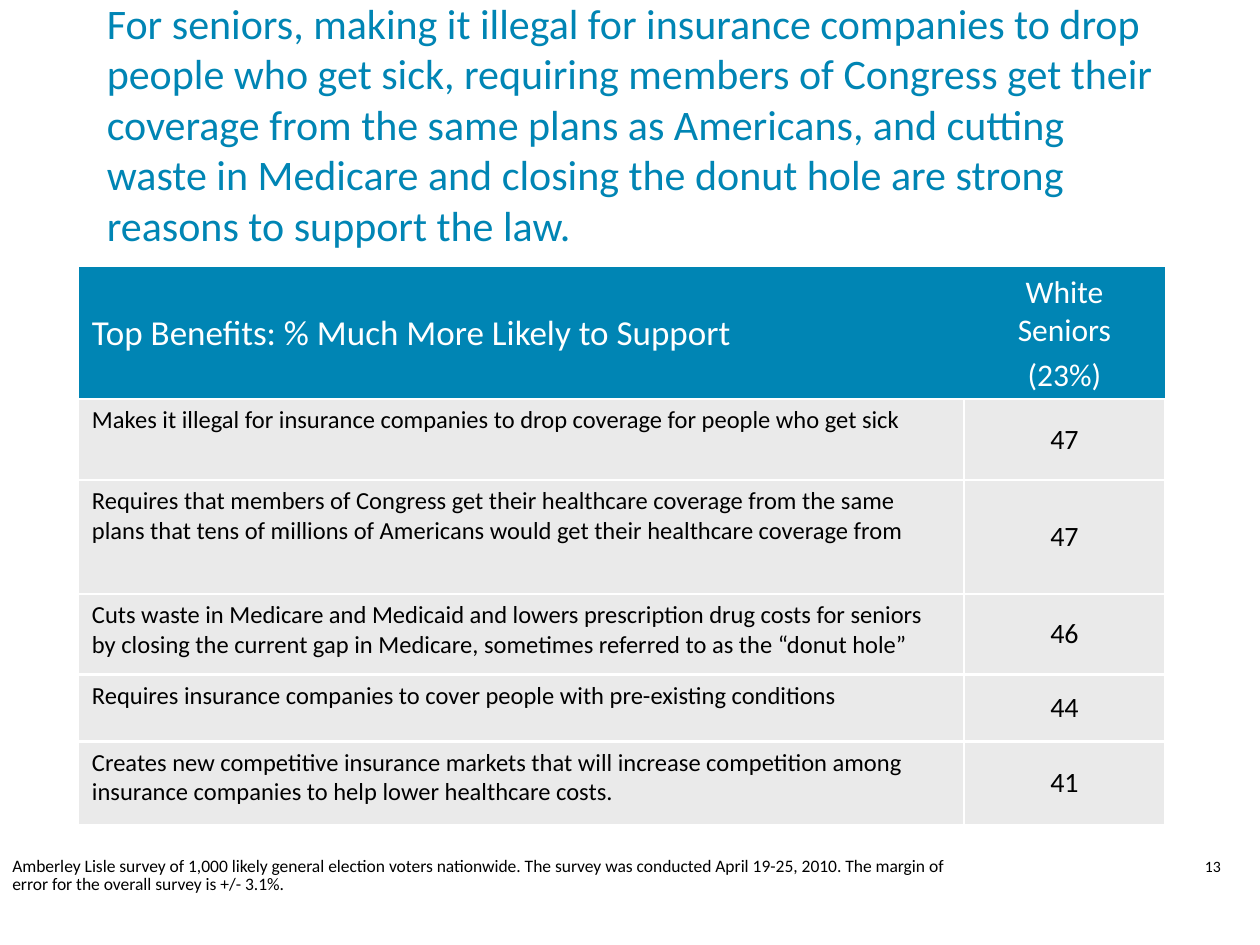
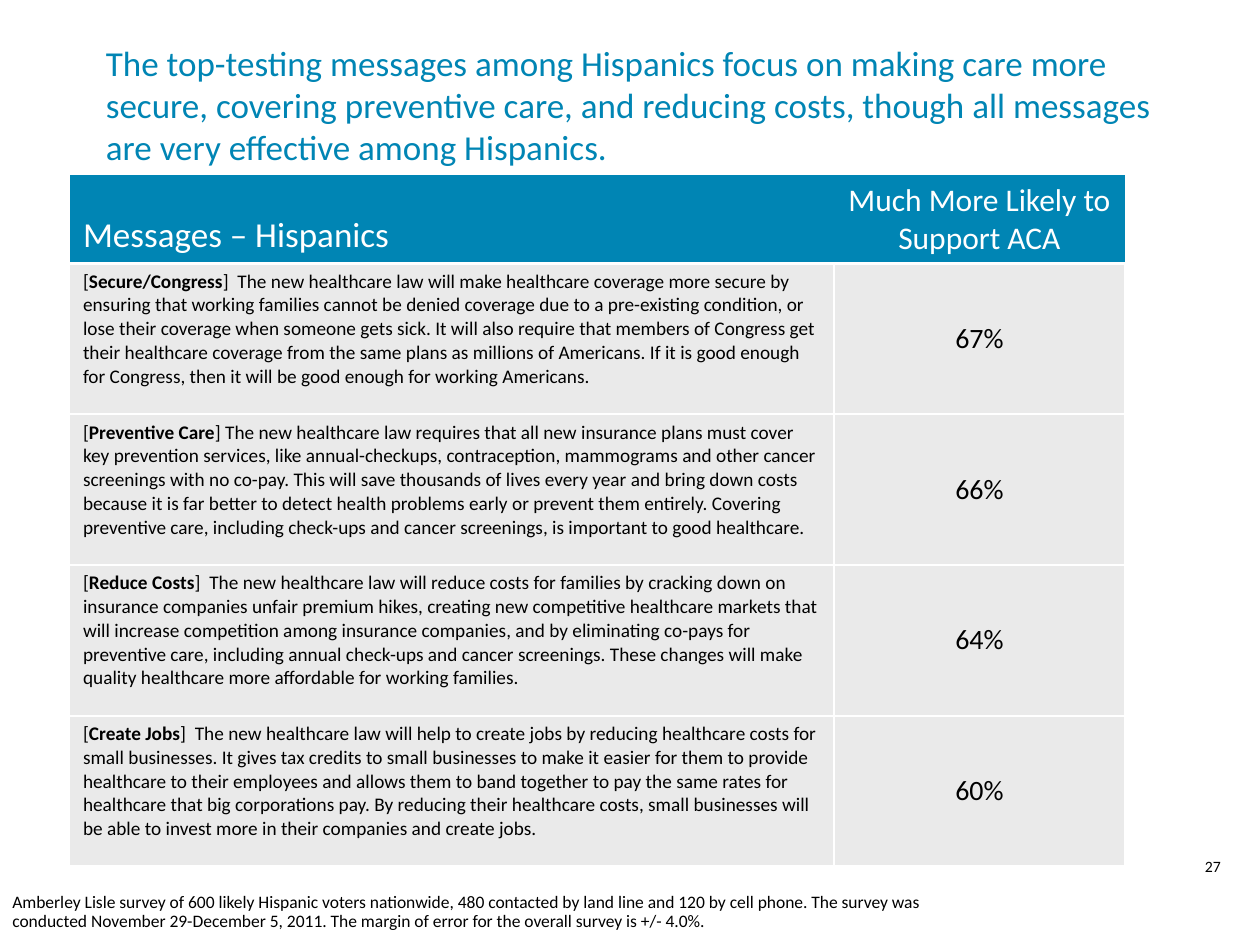
from dataclasses import dataclass

import lxml.etree
import pptx
import pptx.dml.color
import pptx.enum.text
import pptx.oxml.ns
import pptx.presentation
import pptx.slide
import pptx.table
import pptx.text.text
import pptx.util

Cm = pptx.util.Cm
Pt = pptx.util.Pt
Align = pptx.enum.text.PP_ALIGN
Anchor = pptx.enum.text.MSO_ANCHOR
qn = pptx.oxml.ns.qn

# Shared look
COLORS = {"accent": "0085B4", "row": "EAEAEA", "white": "FFFFFF", "black": "000000"}
FONT = "Calibri"
SPACE_BEFORE = 0.2  # share of the text size
BORDER = Pt(1.5)
HEADING_SIZE, COLUMN_SIZE, VALUE_SIZE = 20, 18, 16
FOOTNOTE_SIZE, NUMBER_SIZE = 10, 9
TITLE_WIDTH = 21.64
FOOTNOTE_WIDTH, FOOTNOTE_HEIGHT = 19.63, 1.02
NUMBER_PLACE = (23.5, 17.15, 1.9, 0.84)


@dataclass
class Row:
    text: str
    value: str
    label: str = ""  # bold, shown in square brackets before the text


@dataclass
class Grid:
    left: float
    top: float
    columns: list[float]
    heights: list[float]
    heading: str
    heading_anchor: Anchor
    value_heading: list[str]
    text_size: int
    rows: list[Row]


@dataclass
class SurveyPage:
    number: str
    title: str
    title_size: int
    title_place: tuple[float, float, float]  # left, top, height
    grid: Grid
    footnote: str
    footnote_top: float


# Content, lengths in centimetres
PAGES = [
    SurveyPage(
        number="13",
        title="For seniors, making it illegal for insurance companies to drop people who get sick, "
        "requiring members of Congress get their coverage from the same plans as Americans, and "
        "cutting waste in Medicare and closing the donut hole are strong reasons to support the law.",
        title_size=24,
        title_place=(1.9, 1.04, 2.9),
        grid=Grid(
            left=1.6,
            top=5.38,
            columns=[17.83, 4.06],
            heights=[2.18, 1.63, 2.29, 1.63, 1.35, 1.68],
            heading="Top Benefits: % Much More Likely to Support",
            heading_anchor=Anchor.MIDDLE,
            value_heading=["White Seniors", "(23%)"],
            text_size=14,
            rows=[
                Row("Makes it illegal for insurance companies to drop coverage for people "
                    "who get sick", "47"),
                Row("Requires that members of Congress get their healthcare coverage from the same "
                    "plans that tens of millions of Americans would get their healthcare coverage "
                    "from", "47"),
                Row("Cuts waste in Medicare and Medicaid and lowers prescription drug costs for "
                    "seniors by closing the current gap in Medicare, sometimes referred to as the "
                    "“donut hole”", "46"),
                Row("Requires insurance companies to cover people with pre-existing conditions",
                    "44"),
                Row("Creates new competitive insurance markets that will increase competition "
                    "among insurance companies to help lower healthcare costs.", "41"),
            ],
        ),
        footnote="Amberley Lisle survey of 1,000 likely general election voters nationwide. The "
        "survey was conducted April 19-25, 2010. The margin of error for the overall survey is "
        "+/- 3.1%.",
        footnote_top=17.15,
    ),
    SurveyPage(
        number="27",
        title="The top-testing messages among Hispanics focus on making care more secure, covering "
        "preventive care, and reducing costs, though all messages are very effective among "
        "Hispanics.",
        title_size=20,
        title_place=(1.88, 0.64, 2.95),
        grid=Grid(
            left=1.42,
            top=3.53,
            columns=[15.39, 5.87],
            heights=[1.78] + [3.04] * 4,
            heading="Messages – Hispanics",
            heading_anchor=Anchor.BOTTOM,
            value_heading=["Much More Likely to Support ACA"],
            text_size=11,
            rows=[
                Row("  The new healthcare law will make healthcare coverage more secure by ensuring "
                    "that working families cannot be denied coverage due to a pre-existing "
                    "condition, or lose their coverage when someone gets sick. It will also require "
                    "that members of Congress get their healthcare coverage from the same plans as "
                    "millions of Americans. If it is good enough for Congress, then it will be good "
                    "enough for working Americans.", "67%", "Secure/Congress"),
                Row(" The new healthcare law requires that all new insurance plans must cover key "
                    "prevention services, like annual-checkups, contraception, mammograms and other "
                    "cancer screenings with no co-pay. This will save thousands of lives every year "
                    "and bring down costs because it is far better to detect health problems early "
                    "or prevent them entirely. Covering preventive care, including check-ups and "
                    "cancer screenings, is important to good healthcare.", "66%", "Preventive Care"),
                Row("  The new healthcare law will reduce costs for families by cracking down on "
                    "insurance companies unfair premium hikes, creating new competitive healthcare "
                    "markets that will increase competition among insurance companies, and by "
                    "eliminating co-pays for preventive care, including annual check-ups and cancer "
                    "screenings. These changes will make quality healthcare more affordable for "
                    "working families.", "64%", "Reduce Costs"),
                Row("  The new healthcare law will help to create jobs by reducing healthcare costs "
                    "for small businesses. It gives tax credits to small businesses to make it "
                    "easier for them to provide healthcare to their employees and allows them to "
                    "band together to pay the same rates for healthcare that big corporations pay. "
                    "By reducing their healthcare costs, small businesses will be able to invest "
                    "more in their companies and create jobs.", "60%", "Create Jobs"),
            ],
        ),
        footnote="Amberley Lisle survey of 600 likely Hispanic voters nationwide, 480 contacted by "
        "land line and 120 by cell phone. The survey was conducted November 29-December 5, 2011. "
        "The margin of error for the overall survey is +/- 4.0%.",
        footnote_top=17.88,
    ),
]


def rgb(name: str) -> pptx.dml.color.RGBColor:
    return pptx.dml.color.RGBColor.from_string(COLORS[name])


def style(para: pptx.text.text._Paragraph, size: int, color: str, align: Align = Align.LEFT) -> None:
    para.alignment = align
    para.font.name = FONT
    para.font.size = Pt(size)
    para.font.color.rgb = rgb(color)


def add_text(page: pptx.slide.Slide, place: tuple[float, ...], text: str, size: int,
             align: Align = Align.LEFT, line_spacing: float = 1.0) -> None:
    box = page.shapes.add_textbox(*map(Cm, place))
    box.text_frame.word_wrap = True
    para = box.text_frame.paragraphs[0]
    para.text = text
    para.line_spacing = line_spacing
    style(para, size, "black", align)


def set_borders(cell: pptx.table._Cell, sides: str) -> None:
    """Draw white lines on the given sides (of L, R, T, B) and none on the others."""
    properties = cell._tc.get_or_add_tcPr()
    for index, side in enumerate("LRTB"):
        line = lxml.etree.Element(qn(f"a:ln{side}"), w=str(int(BORDER)))
        if side in sides:
            fill = lxml.etree.SubElement(line, qn("a:solidFill"))
            lxml.etree.SubElement(fill, qn("a:srgbClr"), val=COLORS["white"])
        else:
            lxml.etree.SubElement(line, qn("a:noFill"))
        properties.insert(index, line)


def fill_cell(cell: pptx.table._Cell, paragraphs: list[list[str]], size: int, color: str, fill: str,
              align: Align, anchor: Anchor, sides: str) -> None:
    """Write paragraphs of text pieces; every second piece is bold."""
    cell.fill.solid()
    cell.fill.fore_color.rgb = rgb(fill)
    cell.vertical_anchor = anchor
    set_borders(cell, sides)
    for number, pieces in enumerate(paragraphs):
        para = cell.text_frame.add_paragraph() if number else cell.text_frame.paragraphs[0]
        if number:
            para.space_before = Pt(size * SPACE_BEFORE)
        for index, piece in enumerate(pieces):
            span = para.add_run()
            span.text = piece
            span.font.bold = index % 2 == 1
        style(para, size, color, align)


def add_grid(page: pptx.slide.Slide, grid: Grid) -> None:
    frame = page.shapes.add_table(len(grid.heights), len(grid.columns), Cm(grid.left), Cm(grid.top),
                                  Cm(sum(grid.columns)), Cm(sum(grid.heights)))
    table = frame.table
    table.first_row = table.horz_banding = False
    for column, width in zip(table.columns, grid.columns):
        column.width = Cm(width)
    for row, height in zip(table.rows, grid.heights):
        row.height = Cm(height)

    # Heading row
    fill_cell(table.cell(0, 0), [[grid.heading]], HEADING_SIZE, "white", "accent",
              Align.LEFT, grid.heading_anchor, "B")
    fill_cell(table.cell(0, 1), [[line] for line in grid.value_heading], COLUMN_SIZE, "white",
              "accent", Align.CENTER, Anchor.MIDDLE, "B")

    # Statements and their percentages
    for index, row in enumerate(grid.rows, start=1):
        pieces = ["[", row.label, "]" + row.text] if row.label else [row.text]
        fill_cell(table.cell(index, 0), [pieces], grid.text_size, "black", "row",
                  Align.LEFT, Anchor.TOP, "RTB")
        fill_cell(table.cell(index, 1), [[row.value]], VALUE_SIZE, "black", "row",
                  Align.CENTER, Anchor.MIDDLE, "LRTB")


def add_title(page: pptx.slide.Slide, survey: SurveyPage) -> None:
    title = page.shapes.title
    left, top, height = survey.title_place
    title.left, title.top = Cm(left), Cm(top)
    title.width, title.height = Cm(TITLE_WIDTH), Cm(height)
    title.text_frame.text = survey.title
    title.text_frame.word_wrap = True
    title.text_frame.auto_size = pptx.enum.text.MSO_AUTO_SIZE.NONE
    title.text_frame.vertical_anchor = Anchor.MIDDLE
    style(title.text_frame.paragraphs[0], survey.title_size, "accent")


def add_page(deck: pptx.presentation.Presentation, survey: SurveyPage) -> None:
    page = deck.slides.add_slide(deck.slide_layouts.get_by_name("Title Only"))
    add_text(page, NUMBER_PLACE, survey.number, NUMBER_SIZE, Align.CENTER)
    add_title(page, survey)
    add_grid(page, survey.grid)
    add_text(page, (0, survey.footnote_top, FOOTNOTE_WIDTH, FOOTNOTE_HEIGHT), survey.footnote,
             FOOTNOTE_SIZE, line_spacing=0.9)


def main() -> None:
    deck = pptx.Presentation()
    deck.slide_width, deck.slide_height = Cm(25.4), Cm(19.05)
    for survey in PAGES:
        add_page(deck, survey)
    deck.save("out.pptx")


if __name__ == "__main__":
    main()
